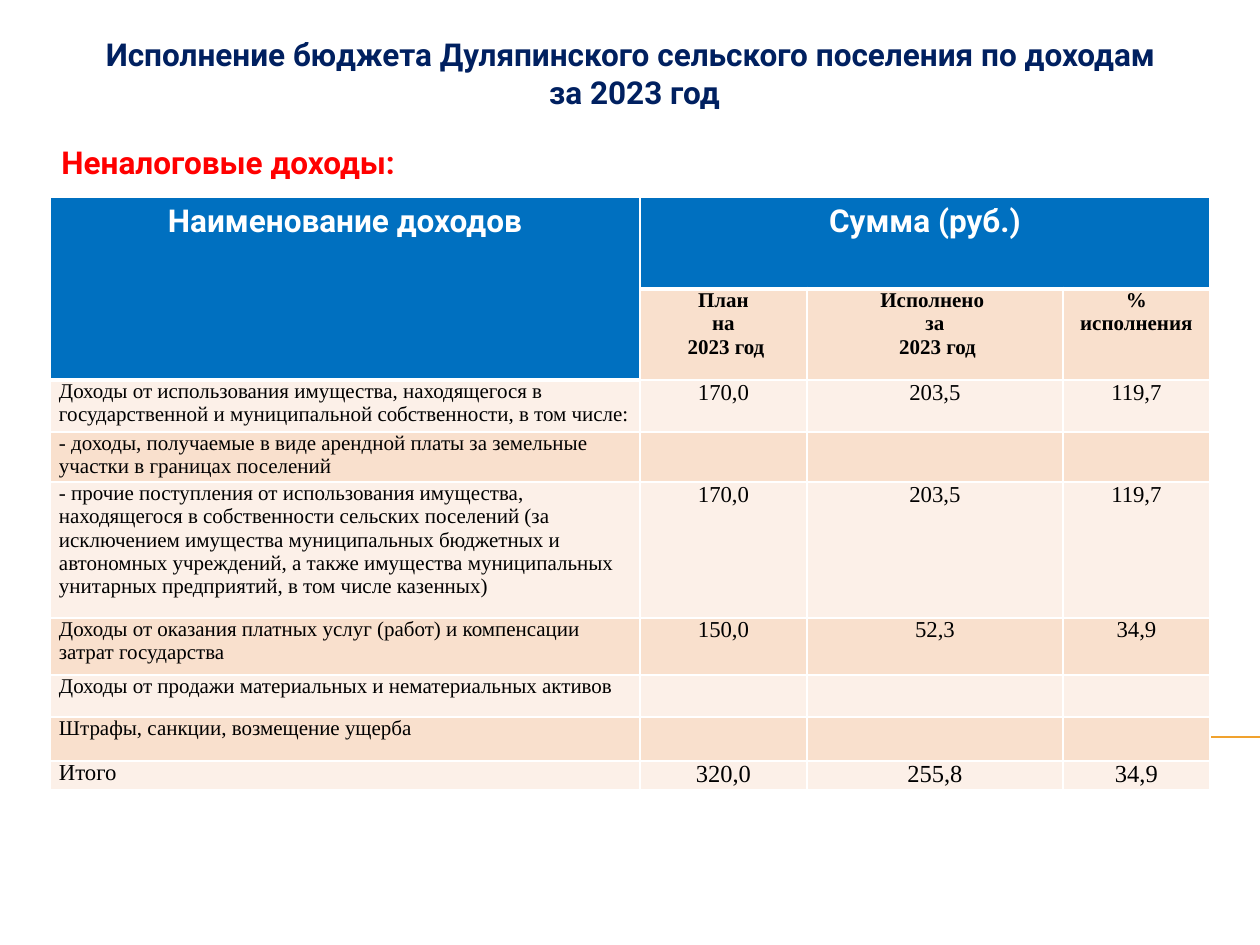
import pptx
import pptx.util
import pptx.dml.color
import pptx.enum.shapes
import pptx.enum.text
import pptx.oxml
import pptx.oxml.ns
from dataclasses import dataclass

PX = 914400 / 126
CENTER = pptx.enum.text.PP_ALIGN.CENTER
LEFT = pptx.enum.text.PP_ALIGN.LEFT


@dataclass(frozen=True)
class Theme:
    heading_font: str = "Roboto"
    body_font: str = "Times New Roman"
    navy: str = "002060"
    red: str = "FF0000"
    blue: str = "0070C0"
    white: str = "FFFFFF"
    black: str = "000000"
    bands: tuple = ("F9E0CD", "FCF0E8")
    rule: str = "F0A22E"
    heading: int = 18
    total: int = 14
    value: int = 13
    body: int = 12


THEME = Theme()
COLUMNS = [590, 167, 256, 147]
ROWS = [92, 91, 52, 50, 136, 57, 42, 44, 29]
SUBHEADS = ["План\nна\n 2023 год", "Исполнено \nза\n 2023 год", "%\nисполнения"]
INCOME = [
    ("Доходы от использования имущества, находящегося в государственной и "
     "муниципальной собственности, в том числе:", "170,0", "203,5", "119,7"),
    ("- доходы, получаемые в виде арендной платы за земельные участки "
     "в границах поселений", "", "", ""),
    ("- прочие поступления от использования имущества, находящегося в "
     "собственности сельских поселений (за исключением имущества муниципальных "
     "бюджетных и автономных учреждений, а также имущества муниципальных "
     "унитарных предприятий, в том числе казенных)", "170,0", "203,5", "119,7"),
    ("Доходы от оказания платных услуг (работ) и компенсации затрат "
     "государства", "150,0", "52,3", "34,9"),
    ("Доходы от продажи материальных и нематериальных активов", "", "", ""),
    ("Штрафы, санкции, возмещение ущерба", "", "", ""),
    ("Итого", "320,0", "255,8", "34,9"),
]


def px(n):
    return pptx.util.Emu(round(n * PX))


def rgb(color):
    return pptx.dml.color.RGBColor.from_string(color)


def write(tf, text, font, size, color, bold=False, align=LEFT):
    tf.text = text
    for p in tf.paragraphs:
        p.alignment = align
        for r in p.runs:
            r.font.name = font
            r.font.size = pptx.util.Pt(size)
            r.font.bold = bold
            r.font.color.rgb = rgb(color)


def add_heading(slide, box, text, color, align):
    tf = slide.shapes.add_textbox(*map(px, box)).text_frame
    tf.word_wrap = True
    write(tf, text, THEME.heading_font, THEME.heading, color, True, align)


def add_rule(slide, x1, x2, y):
    line = slide.shapes.add_connector(
        pptx.enum.shapes.MSO_CONNECTOR.STRAIGHT, px(x1), px(y), px(x2), px(y))
    line.line.color.rgb = rgb(THEME.rule)
    line.line.width = pptx.util.Pt(0.75)
    sp_pr = line._element.spPr
    sp_pr.append(pptx.oxml.parse_xml(
        f"<a:effectLst {pptx.oxml.ns.nsdecls('a')}/>"))


def set_borders(cell, widths):
    """Draw white cell edges; widths maps an edge tag to points."""
    tc_pr = cell._tc.get_or_add_tcPr()
    for i, (edge, width) in enumerate(widths.items()):
        tc_pr.insert(i, pptx.oxml.parse_xml(
            f'<a:{edge} {pptx.oxml.ns.nsdecls("a")} w="{width * 12700}">'
            f'<a:solidFill><a:srgbClr val="{THEME.white}"/></a:solidFill>'
            f'</a:{edge}>'))


def fill_cell(cell, color):
    cell.fill.solid()
    cell.fill.fore_color.rgb = rgb(color)


def style_header(cell):
    fill_cell(cell, THEME.blue)
    set_borders(cell, {"lnL": 1, "lnR": 1, "lnT": 1, "lnB": 3})


def body_cell(cell, text, row, size, bold=False, align=CENTER):
    cell.margin_left = cell.margin_right = px(9)
    cell.margin_top = cell.margin_bottom = 0
    fill_cell(cell, THEME.bands[(row + 1) % 2])
    set_borders(cell, {"lnL": 1, "lnR": 1, "lnB": 1})
    if text:
        write(cell.text_frame, text, THEME.body_font, size, THEME.black,
              bold, align)


def add_income_table(slide):
    frame = slide.shapes.add_table(len(ROWS), len(COLUMNS), px(50), px(197),
                                   px(sum(COLUMNS)), px(sum(ROWS)))
    table = frame.table
    table.first_row = table.horz_banding = False
    for column, width in zip(table.columns, COLUMNS):
        column.width = px(width)
    for row, height in zip(table.rows, ROWS):
        row.height = px(height)

    # Merged header cells
    for r, c in [(0, 0), (0, 1), (0, 2), (0, 3), (1, 0)]:
        style_header(table.cell(r, c))
    table.cell(0, 0).merge(table.cell(1, 0))
    table.cell(0, 1).merge(table.cell(0, 3))
    for c, text in enumerate(["Наименование доходов", "Сумма (руб.)"]):
        write(table.cell(0, c).text_frame, text, THEME.heading_font,
              THEME.heading, THEME.white, True, CENTER)

    # Column subheads
    for c, text in enumerate(SUBHEADS, 1):
        body_cell(table.cell(1, c), text, 1, THEME.body, bold=True)

    # Income rows; the total row is one point larger
    for r, (name, *values) in enumerate(INCOME, 2):
        last = r == len(ROWS) - 1
        body_cell(table.cell(r, 0), name, r,
                  THEME.value if last else THEME.body, align=LEFT)
        for c, value in enumerate(values, 1):
            body_cell(table.cell(r, c), value, r,
                      THEME.total if last else THEME.value)


def main():
    prs = pptx.Presentation()
    prs.slide_width, prs.slide_height = px(1260), px(945)
    slide = prs.slides.add_slide(prs.slide_layouts[6])
    add_rule(slide, 71, 1260, 737)
    add_income_table(slide)
    add_heading(slide, (78, 29, 1113, 127),
                "Исполнение бюджета Дуляпинского сельского поселения по доходам "
                "\nза 2023 год", THEME.navy, CENTER)
    add_heading(slide, (49, 137, 384, 50), "Неналоговые доходы:",
                THEME.red, LEFT)
    prs.save("out.pptx")


if __name__ == "__main__":
    main()
